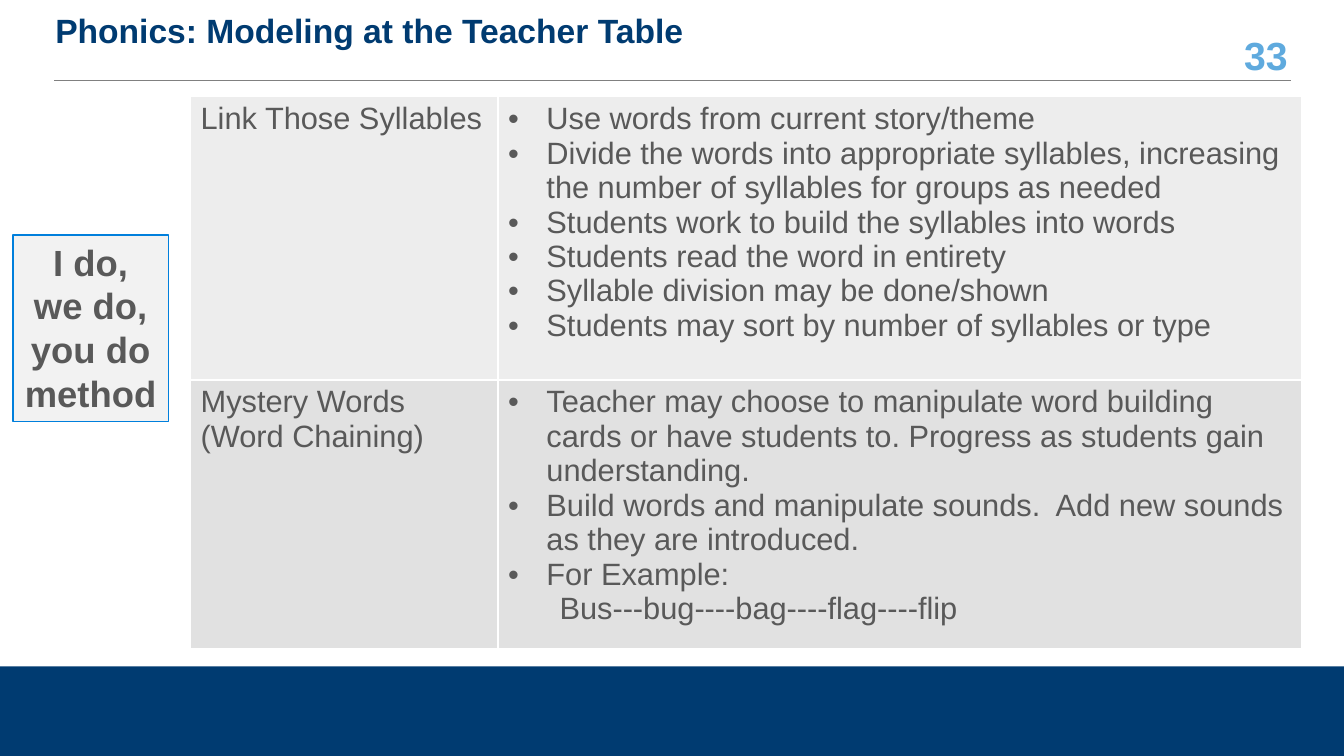
"""Build the phonics teacher table slide."""
from dataclasses import dataclass

from lxml.etree import SubElement
from pptx import Presentation
from pptx.dml.color import RGBColor
from pptx.enum.shapes import MSO_CONNECTOR, MSO_SHAPE
from pptx.enum.text import MSO_ANCHOR, PP_ALIGN
from pptx.oxml.ns import qn
from pptx.util import Inches, Pt


@dataclass(frozen=True)
class Theme:
    """Colours, font and type sizes of the slide."""
    font: str = "Arial"
    navy: str = "003B71"
    sky: str = "5FAADE"
    blue: str = "007FDC"
    grey: str = "595959"
    rule: str = "808080"
    pale: str = "F2F2F2"
    white: str = "FFFFFF"
    rows: tuple = ("EDEDED", "E1E1E1")
    title: int = 24
    number: int = 28
    body: int = 22
    note: int = 26


THEME = Theme()
HANG = 0.38
STEP = 0.51
TOPICS = [
    (
        ["Link Those Syllables"],
        [
            "Use words from current story/theme",
            "Divide the words into appropriate syllables, increasing "
            "the number of syllables for groups as needed",
            "Students work to build the syllables into words",
            "Students read the word in entirety",
            "Syllable division may be done/shown",
            "Students may sort by number of syllables or type",
        ],
        [],
    ),
    (
        ["Mystery Words", "(Word Chaining)"],
        [
            "Teacher may choose to manipulate word building cards or have "
            "students to. Progress as students gain understanding.",
            "Build words and manipulate sounds.  Add new sounds "
            "as they are introduced.",
            "For Example:",
        ],
        ["Bus---bug----bag----flag----flip"],
    ),
]


def paint(fill, color):
    """Give a fill one solid colour."""
    fill.solid()
    fill.fore_color.rgb = RGBColor.from_string(color)


def indent(para, left, bullet=False):
    """Indent a paragraph, hanging it from a bullet if asked."""
    props = para._p.get_or_add_pPr()
    props.set("marL", str(Inches(left)))
    props.set("indent", str(Inches(-left if bullet else 0)))
    if bullet:
        SubElement(props, qn("a:buFont")).set("typeface", THEME.font)
        SubElement(props, qn("a:buChar")).set("char", "•")


def write(frame, lines, size, color, bold=False, align=PP_ALIGN.LEFT):
    """Write each line as a paragraph and return the paragraphs."""
    frame.word_wrap = True
    paras = []
    for index, line in enumerate(lines):
        para = frame.add_paragraph() if index else frame.paragraphs[0]
        para.alignment = align
        run = para.add_run()
        run.text = line
        run.font.name = THEME.font
        run.font.size = Pt(size)
        run.font.bold = bold
        run.font.color.rgb = RGBColor.from_string(color)
        paras.append(para)
    return paras


def add_label(slide, area, text, size, color, align=PP_ALIGN.LEFT):
    """Add a bold line of text centred in the height of its box."""
    frame = slide.shapes.add_textbox(*map(Inches, area)).text_frame
    frame.vertical_anchor = MSO_ANCHOR.MIDDLE
    write(frame, [text], size, color, True, align)


def add_block(slide, area, color, edge=None):
    """Add a filled rectangle with an optional outline."""
    block = slide.shapes.add_shape(MSO_SHAPE.RECTANGLE, *map(Inches, area))
    block.shadow.inherit = False
    paint(block.fill, color)
    if edge:
        paint(block.line.fill, edge)
        block.line.width = Pt(1)
    else:
        block.line.fill.background()
    return block


def add_rule(slide, left, right, top):
    """Add a thin level line."""
    ends = map(Inches, (left, top, right, top))
    rule = slide.shapes.add_connector(MSO_CONNECTOR.STRAIGHT, *ends)
    paint(rule.line.fill, THEME.rule)
    rule.line.width = Pt(0.5)
    SubElement(rule._element.spPr, qn("a:effectLst"))


def dress(cell, color):
    """Give a cell white borders and a fill."""
    props = cell._tc.get_or_add_tcPr()
    for side in ("lnL", "lnR", "lnT", "lnB"):
        line = SubElement(props, qn(f"a:{side}"), w=str(Pt(1)))
        fill = SubElement(line, qn("a:solidFill"))
        SubElement(fill, qn("a:srgbClr"), val=THEME.white)
    paint(cell.fill, color)


def add_topics(slide, left, top, widths, heights):
    """Add the table of topics and their steps."""
    area = map(Inches, (left, top, sum(widths), sum(heights)))
    table = slide.shapes.add_table(len(heights), len(widths), *area).table
    table.first_row = table.horz_banding = False
    for column, width in zip(table.columns, widths):
        column.width = Inches(width)
    for row, height, topic, color in zip(
        table.rows, heights, TOPICS, THEME.rows
    ):
        row.height = Inches(height)
        names, points, extras = topic
        for cell in row.cells:
            dress(cell, color)
        name, steps = row.cells
        write(name.text_frame, names, THEME.body, THEME.grey)
        paras = write(
            steps.text_frame, points + extras, THEME.body, THEME.grey
        )
        for index, para in enumerate(paras):
            bullet = index < len(points)
            indent(para, HANG if bullet else STEP, bullet)


def main():
    """Build and save the slide."""
    deck = Presentation()
    deck.slide_width, deck.slide_height = Inches(13.33), Inches(7.5)
    slide = deck.slides.add_slide(deck.slide_layouts[6])
    add_block(slide, (0, 6.61, 13.33, 0.89), THEME.navy)
    add_label(slide, (12.07, 0.33, 0.8, 0.42), "33",
              THEME.number, THEME.sky, PP_ALIGN.RIGHT)
    add_rule(slide, 0.54, 12.8, 0.8)
    add_label(slide, (0.45, 0.09, 11.6, 0.42),
              "Phonics: Modeling at the Teacher Table",
              THEME.title, THEME.navy)
    add_topics(slide, 1.89, 0.96, (3.05, 7.97), (2.81, 2.49))
    note = add_block(slide, (0.13, 2.33, 1.54, 1.85), THEME.pale, THEME.blue)
    note.text_frame.vertical_anchor = MSO_ANCHOR.TOP
    write(note.text_frame, ["I do,", "we do, you do method"],
          THEME.note, THEME.grey, True, PP_ALIGN.CENTER)
    deck.save("out.pptx")


if __name__ == "__main__":
    main()
